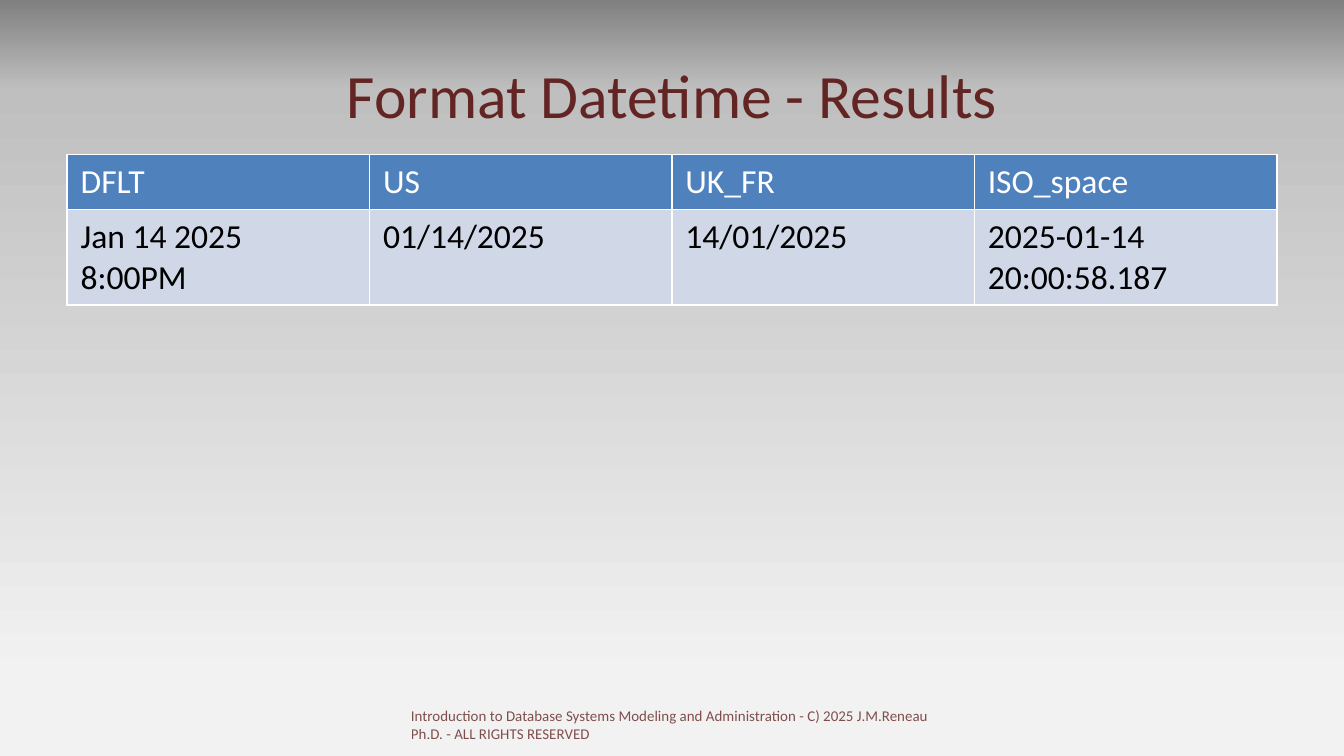
from copy import deepcopy

from lxml.etree import SubElement
from pptx import Presentation
from pptx.dml.color import RGBColor
from pptx.enum.text import MSO_ANCHOR, PP_ALIGN
from pptx.oxml.ns import qn
from pptx.util import Inches, Pt

# Content
TITLE = "Format Datetime - Results"
RESULTS = [
    ("DFLT", "US", "UK_FR", "ISO_space"),
    ("Jan 14 2025 8:00PM", "01/14/2025", "14/01/2025", "2025-01-14 20:00:58.187"),
]
FOOTER = ("Introduction to Database Systems Modeling and Administration - "
          "C) 2025 J.M.Reneau Ph.D. - ALL RIGHTS RESERVED")

# Style
FONT = "Calibri"
COLORS = {"maroon": "632523", "header": "4F81BD", "body": "D0D8E8",
          "white": "FFFFFF", "black": "000000"}
BACKGROUND = [(0, "808080"), (0.12, "BFBFBF"), (0.9, "F2F2F2")]
ROW_STYLES = [("header", "white", 0.41), ("body", "black", 0.71)]
SLIDE_WIDTH = 10
LEFT, WIDTH = 0.5, 9


def style(paragraph, size, color):
    paragraph.font.name = FONT
    paragraph.font.size = Pt(size)
    paragraph.font.color.rgb = RGBColor.from_string(COLORS[color])


def add_borders(cell, color, width):
    properties = cell._tc.get_or_add_tcPr()
    for index, side in enumerate(("lnL", "lnR", "lnT", "lnB")):
        line = properties.makeelement(qn(f"a:{side}"), {"w": str(Pt(width))})
        fill = SubElement(line, qn("a:solidFill"))
        SubElement(fill, qn("a:srgbClr"), val=COLORS[color])
        properties.insert(index, line)


# 16:9 slide
prs = Presentation()
prs.slide_width = Inches(SLIDE_WIDTH)
prs.slide_height = Inches(SLIDE_WIDTH * 9 / 16)
slide = prs.slides.add_slide(prs.slide_layouts[5])

# Background gradient, from top to bottom
background = slide.background.fill
background.gradient()
background.gradient_angle = 270
stop_list = slide._element.find(".//" + qn("a:gsLst"))
stop_list.append(deepcopy(stop_list[-1]))
for stop, (position, color) in zip(background.gradient_stops, BACKGROUND):
    stop.position = position
    stop.color.rgb = RGBColor.from_string(color)

# Title
title = slide.shapes.title
title.left, title.top = Inches(LEFT), Inches(0.23)
title.width, title.height = Inches(WIDTH), Inches(0.94)
title.text_frame.text = TITLE
title.text_frame.vertical_anchor = MSO_ANCHOR.MIDDLE
title.text_frame.paragraphs[0].alignment = PP_ALIGN.CENTER
style(title.text_frame.paragraphs[0], 33, "maroon")

# Results table
table_height = sum(height for _, _, height in ROW_STYLES)
table = slide.shapes.add_table(
    len(RESULTS), len(RESULTS[0]),
    Inches(LEFT), Inches(1.15), Inches(WIDTH), Inches(table_height)).table
for row, values, (fill, ink, height) in zip(table.rows, RESULTS, ROW_STYLES):
    row.height = Inches(height)
    for cell, value in zip(row.cells, values):
        cell.text = value
        cell.fill.solid()
        cell.fill.fore_color.rgb = RGBColor.from_string(COLORS[fill])
        style(cell.text_frame.paragraphs[0], 18, ink)
        cell.text_frame.paragraphs[0].font.bold = False
        add_borders(cell, "white", 1)

# Footer, slightly transparent
footer = slide.shapes.add_textbox(Inches(2.96), Inches(5.21), Inches(4.06), Inches(0.3))
footer.text_frame.word_wrap = True
footer.text_frame.text = FOOTER
style(footer.text_frame.paragraphs[0], 8, "maroon")
footer_color = footer._element.find(".//" + qn("a:srgbClr"))
SubElement(footer_color, qn("a:alpha"), val="80000")

prs.save("out.pptx")
